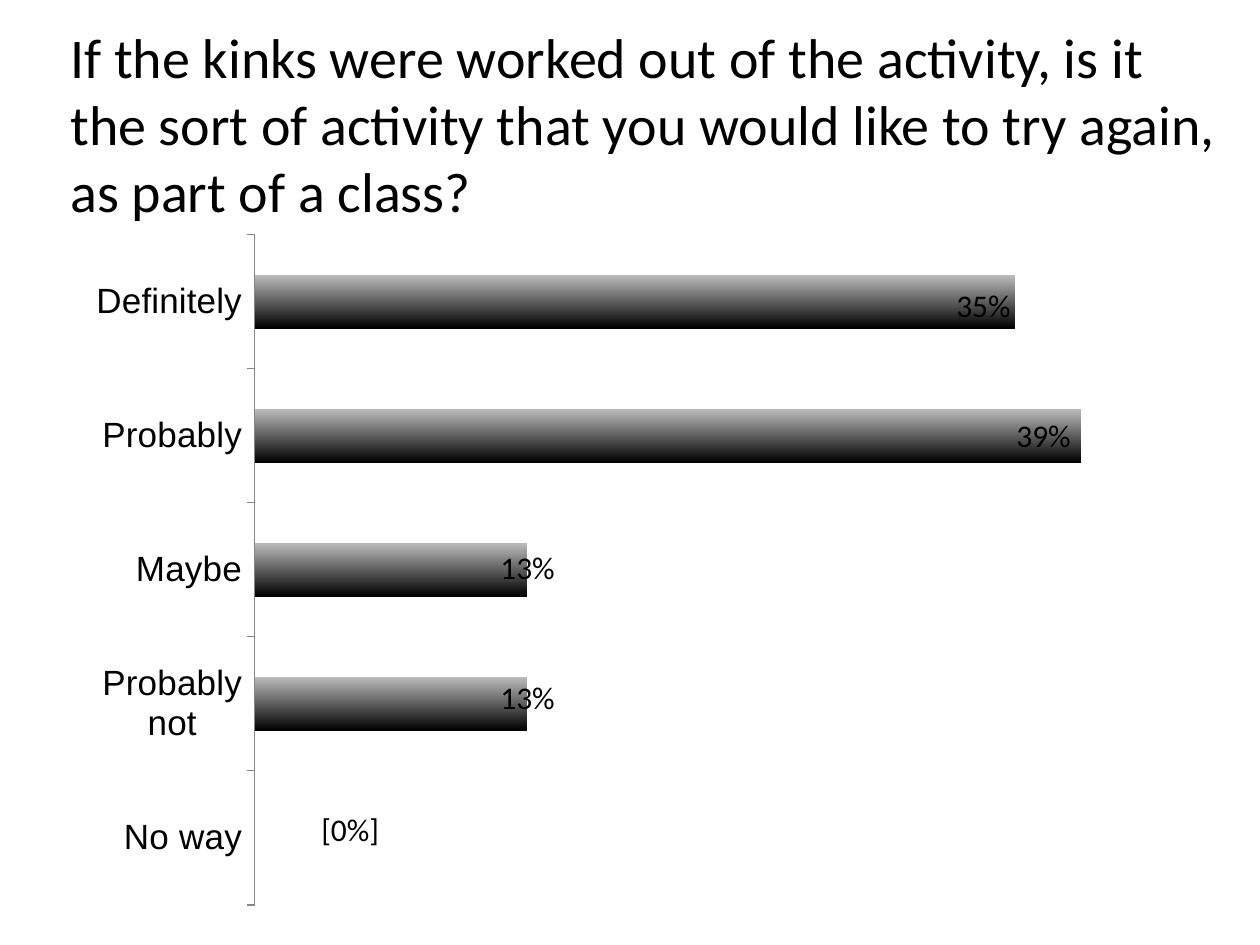
from lxml import etree
from pptx import Presentation
from pptx.chart.data import CategoryChartData
from pptx.dml.color import RGBColor
from pptx.enum.chart import XL_CHART_TYPE as ChartType, XL_TICK_MARK as Tick
from pptx.enum.text import MSO_AUTO_SIZE as AutoSize
from pptx.oxml import parse_xml
from pptx.oxml.ns import nsdecls
from pptx.util import Pt

PX = 914400 // 126
BLACK = RGBColor(0x00, 0x00, 0x00)
SILVER = RGBColor(0xBC, 0xBC, 0xBC)
GRAY = RGBColor(0x86, 0x86, 0x86)

QUESTION = ("If the kinks were worked out of the activity, is it the sort of activity "
            "that you would like to try again, as part of a class?")
ANSWERS = {"Definitely": 92, "Probably": 100, "Maybe": 33, "Probably not": 33, "No way": 0}
SHARES = [("35%", 944, 280), ("39%", 1004, 410), ("13%", 488, 542),
          ("13%", 488, 672), ("[0%]", 309, 804)]
CHART_BOX = (73, 220, 1164, 699)
PLOT_BOX = (255, 235, 909, 670)


def emu(*lengths):
    return [n * PX for n in lengths]


def set_format(obj, values):
    for name, value in values.items():
        setattr(obj, name, value)


def set_font(font, size, name):
    set_format(font, {"size": Pt(size), "name": name})
    font.color.rgb = BLACK


def add_text(s, text, box, size):
    tf = s.shapes.add_textbox(*emu(*box)).text_frame
    set_format(tf, {"word_wrap": True, "auto_size": AutoSize.SHAPE_TO_FIT_TEXT})
    r = tf.paragraphs[0].add_run()
    r.text = text
    set_font(r.font, size, "Calibri")


def place_plot(chart):
    left, top, width, height = CHART_BOX
    x, y, w, h = PLOT_BOX
    fractions = {"x": (x - left) / width, "y": (y - top) / height,
                 "w": w / width, "h": h / height}
    layout = parse_xml(
        f'<c:layout {nsdecls("c")}><c:manualLayout><c:layoutTarget val="inner"/>'
        '<c:xMode val="edge"/><c:yMode val="edge"/></c:manualLayout></c:layout>')
    for name, value in fractions.items():
        etree.SubElement(layout[0], layout.tag.replace("layout", name), val=f"{value:.3f}")
    area = chart.plots[0]._element.getparent()
    for old in area.findall(layout.tag):
        area.remove(old)
    area.insert(0, layout)


def add_answer_chart(s):
    data = CategoryChartData()
    data.categories = list(ANSWERS)
    data.add_series("Series 1", list(ANSWERS.values()))
    chart = s.shapes.add_chart(ChartType.BAR_CLUSTERED, *emu(*CHART_BOX), data).chart
    set_format(chart, {"has_legend": False, "has_title": False})
    set_font(chart.font, 10, "Arial")

    axis = chart.category_axis
    set_format(axis, {"reverse_order": True, "major_tick_mark": Tick.OUTSIDE,
                      "minor_tick_mark": Tick.NONE})
    set_font(axis.tick_labels.font, 20, "Arial")
    axis.format.line.color.rgb = GRAY
    set_format(chart.value_axis, {"visible": False, "has_major_gridlines": False,
                                  "minimum_scale": 0, "maximum_scale": 110})

    plot = chart.plots[0]
    set_format(plot, {"gap_width": 150, "vary_by_categories": False})
    fill = plot.series[0].format.fill
    fill.gradient()
    fill.gradient_angle = 270
    for stop, color in zip(fill.gradient_stops, (SILVER, BLACK)):
        stop.color.rgb = color
    place_plot(chart)


def main():
    prs = Presentation()
    prs.slide_width, prs.slide_height = emu(1260, 945)
    s = prs.slides.add_slide(prs.slide_layouts[6])
    add_answer_chart(s)
    for text, left, top in SHARES:
        add_text(s, text, (left, top, 103, 50), 18)
    add_text(s, QUESTION, (58, 16, 1173, 217), 32)
    prs.save("out.pptx")


if __name__ == "__main__":
    main()
